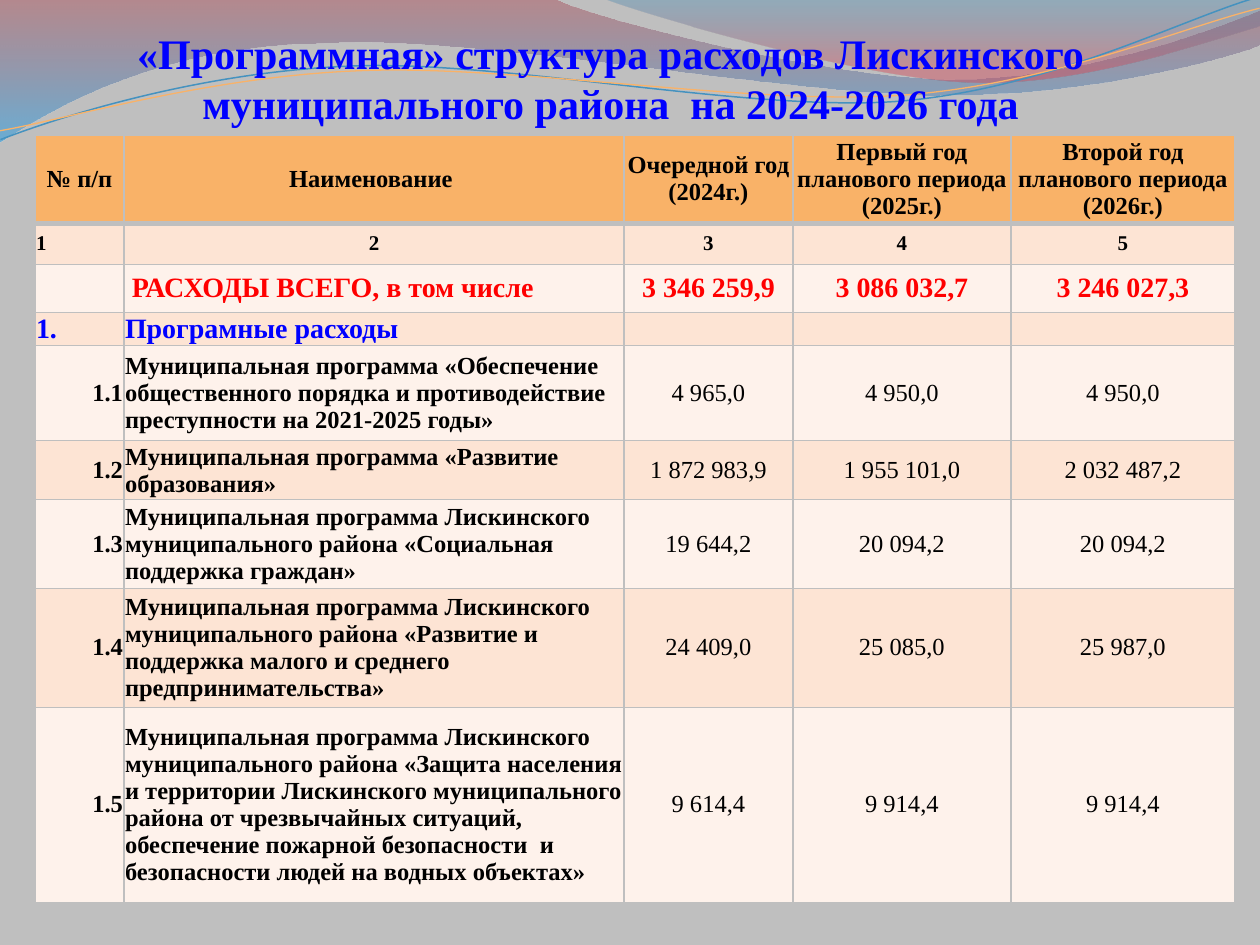
from dataclasses import dataclass

from lxml import etree
from pptx import Presentation
from pptx import util as u
from pptx.dml.color import RGBColor
from pptx.enum import text
from pptx.oxml import ns

PX = 9144000 / 1260
FONT = "Times New Roman"
GREY = RGBColor(0xBF, 0xBF, 0xBF)
BLACK = RGBColor(0, 0, 0)
BLUE = RGBColor(0, 0, 0xFF)
RED = RGBColor(0xFF, 0, 0)
ORANGE = RGBColor(0xF9, 0xB2, 0x68)
PEACH = RGBColor(0xFD, 0xE4, 0xD4)
CREAM = RGBColor(0xFE, 0xF2, 0xEB)
STEEL = RGBColor(0x45, 0x92, 0xBF)
LEFT, CENTER, RIGHT = text.PP_ALIGN.LEFT, text.PP_ALIGN.CENTER, text.PP_ALIGN.RIGHT


@dataclass(frozen=True)
class Stop:
    position: float
    color: RGBColor
    opacity: int


@dataclass(frozen=True)
class Wave:
    start: tuple
    segments: tuple
    stops: tuple = ()
    line_color: RGBColor | None = None
    line_width: float = 0
    rotation: float = 0


@dataclass(frozen=True)
class Row:
    height: int
    cells: tuple
    size: int = 14
    color: RGBColor = BLACK
    number_align: text.PP_ALIGN = RIGHT
    name_align: text.PP_ALIGN = LEFT
    bold_values: bool = False


WAVES = (
    Wave((0, 0), ((554, -1), (600, 21, 837, 79, 955, 79), (1074, 79, 1207, 33, 1260, 11),
                  (1261, 45), (1238, 55, 1096, 96, 940, 95), (784, 95, 481, 35, 324, 43),
                  (163, 45, 58, 105, -1, 142)),
         stops=(Stop(0, RGBColor(0xA8, 0x47, 0x52), 45), Stop(1, RGBColor(0x24, 0x9F, 0xE6), 55))),
    Wave((604, -1), ((641, 14, 859, 78, 969, 82), (1079, 87, 1211, 40, 1260, 26), (1260, 0)),
         stops=(Stop(0, RGBColor(0x2A, 0x7E, 0xAF), 30), Stop(0.8, RGBColor(0xD2, 0x4B, 0x5A), 45))),
    Wave((-2, 110), ((58, 90, 199, 52, 350, 53), (499, 53, 745, 118, 896, 114),
                     (1049, 109, 1184, 45, 1260, 27)),
         line_color=STEEL, line_width=0.85, rotation=357.3),
    Wave((-2, 101), ((58, 94, 207, 57, 357, 58), (509, 58, 750, 112, 902, 108),
                     (1052, 104, 1188, 52, 1262, 38)),
         line_color=ORANGE, line_width=0.75, rotation=357.3),
)

COLUMNS = (89, 500, 169, 218, 224)
ROWS = (
    Row(87, ("№ п/п", "Наименование ", "Очередной год (2024г.)", "Первый год планового периода (2025г.)",
             "Второй год планового периода (2026г.)"),
        number_align=CENTER, name_align=CENTER, bold_values=True),
    Row(41, ("1", "2", "3", "4", "5"), size=12, number_align=LEFT, name_align=CENTER, bold_values=True),
    Row(48, ("", " РАСХОДЫ ВСЕГО, в том числе", "3 346 259,9", "3 086 032,7", "3 246 027,3"),
        size=16, color=RED, bold_values=True),
    Row(33, ("1.", "Програмные расходы", "", "", ""), size=16, color=BLUE, number_align=LEFT),
    Row(95, ("1.1", "Муниципальная программа «Обеспечение общественного порядка и противодействие "
             "преступности на 2021-2025 годы»", "4 965,0", "4 950,0", "4 950,0")),
    Row(56, ("1.2", "Муниципальная программа «Развитие образования»",
             "1 872 983,9", "1 955 101,0", "2 032 487,2")),
    Row(88, ("1.3", "Муниципальная программа Лискинского муниципального района «Социальная "
             "поддержка граждан»", "19 644,2", "20 094,2", "20 094,2")),
    Row(119, ("1.4", "Муниципальная программа Лискинского муниципального района «Развитие и "
              "поддержка малого и среднего предпринимательства»", "24 409,0", "25 085,0", "25 987,0")),
    Row(195, ("1.5", "Муниципальная программа Лискинского муниципального района «Защита населения "
              "и территории Лискинского муниципального района от чрезвычайных ситуаций, обеспечение "
              "пожарной безопасности  и безопасности людей на водных объектах»",
              "9 614,4", "9 914,4", "9 914,4")),
)


def px(length: int) -> int:
    return round(length * PX)


def bend(shape, segments: tuple) -> None:
    outline = next(shape._element.iter(ns.qn("a:path")))
    straight = iter(outline.findall(ns.qn("a:lnTo")))
    for segment in segments:
        steps = [next(straight) for _ in range(len(segment) // 2)]
        if len(steps) == 3:
            curve = etree.Element(ns.qn("a:cubicBezTo"))
            steps[0].addprevious(curve)
            for step in steps:
                curve.append(step[0])
                outline.remove(step)


def draw_wave(slide, wave: Wave) -> None:
    builder = slide.shapes.build_freeform(px(wave.start[0]), px(wave.start[1]))
    points = [(px(x), px(y)) for segment in wave.segments for x, y in zip(segment[::2], segment[1::2])]
    builder.add_line_segments(points, close=bool(wave.stops))
    shape = builder.convert_to_shape()
    bend(shape, wave.segments)
    shape.shadow.inherit = False
    shape.rotation = wave.rotation
    if not wave.stops:
        shape.fill.background()
        shape.line.color.rgb = wave.line_color
        shape.line.width = u.Pt(wave.line_width)
        return
    shape.line.fill.background()
    shape.fill.gradient()
    shape.fill.gradient_angle = 270
    for gradient_stop, stop in zip(shape.fill.gradient_stops, wave.stops):
        gradient_stop.position = stop.position
        gradient_stop.color.rgb = stop.color
    for color, stop in zip(shape._element.spPr.iter(ns.qn("a:srgbClr")), wave.stops):
        etree.SubElement(color, ns.qn("a:alpha"), val=str(stop.opacity * 1000))


def write(paragraph, words: str, size: int, color: RGBColor, bold: bool, align) -> None:
    paragraph.alignment = align
    if not words:
        etree.SubElement(paragraph._p, ns.qn("a:endParaRPr"), sz=str(size * 100))
        return
    run = paragraph.add_run()
    run.text = words
    run.font.name = FONT
    run.font.size = u.Pt(size)
    run.font.bold = bold
    run.font.color.rgb = color


def border_cell(cell, top: float, bottom: float) -> None:
    properties = cell._tc.get_or_add_tcPr()
    for side, points in (("L", 1), ("R", 1), ("T", top), ("B", bottom)):
        edge = etree.SubElement(properties, ns.qn(f"a:ln{side}"), w=str(u.Pt(points)))
        solid = etree.SubElement(edge, ns.qn("a:solidFill"))
        etree.SubElement(solid, ns.qn("a:srgbClr"), val=str(GREY))


def draw_expenses(slide) -> None:
    frame = slide.shapes.add_table(len(ROWS), len(COLUMNS), px(35), px(135),
                                   px(sum(COLUMNS)), px(sum(row.height for row in ROWS)))
    expenses = frame.table
    expenses.first_row = expenses.horz_banding = False
    for column, width in zip(expenses.columns, COLUMNS):
        column.width = px(width)
    for index, row in enumerate(ROWS):
        expenses.rows[index].height = px(row.height)
        aligns = (row.number_align, row.name_align, CENTER, CENTER, CENTER)
        for position, (words, align) in enumerate(zip(row.cells, aligns)):
            cell = expenses.cell(index, position)
            border_cell(cell, top=3 if index == 1 else 0.5, bottom=3 if index == 0 else 0.5)
            cell.fill.solid()
            cell.fill.fore_color.rgb = ORANGE if index == 0 else PEACH if index % 2 else CREAM
            cell.vertical_anchor = text.MSO_ANCHOR.MIDDLE
            cell.margin_left = cell.margin_right = px(1)
            cell.margin_top = cell.margin_bottom = 0
            write(cell.text_frame.paragraphs[0], words, row.size, row.color,
                  position < 2 or row.bold_values, align)


def draw_title(slide) -> None:
    title = slide.shapes.add_textbox(px(29), px(30), px(1163), px(98)).text_frame
    title.word_wrap = True
    title.vertical_anchor = text.MSO_ANCHOR.BOTTOM
    title.margin_left = title.margin_right = title.margin_bottom = 0
    title.margin_top = px(6)
    write(title.paragraphs[0], "«Программная» структура расходов Лискинского муниципального района  "
          "на 2024-2026 года", 24, BLUE, True, CENTER)


def main() -> None:
    deck = Presentation()
    deck.slide_width, deck.slide_height = px(1260), px(945)
    slide = deck.slides.add_slide(deck.slide_layouts[6])
    slide.background.fill.solid()
    slide.background.fill.fore_color.rgb = GREY
    for wave in WAVES:
        draw_wave(slide, wave)
    draw_title(slide)
    draw_expenses(slide)
    deck.save("out.pptx")


if __name__ == "__main__":
    main()
